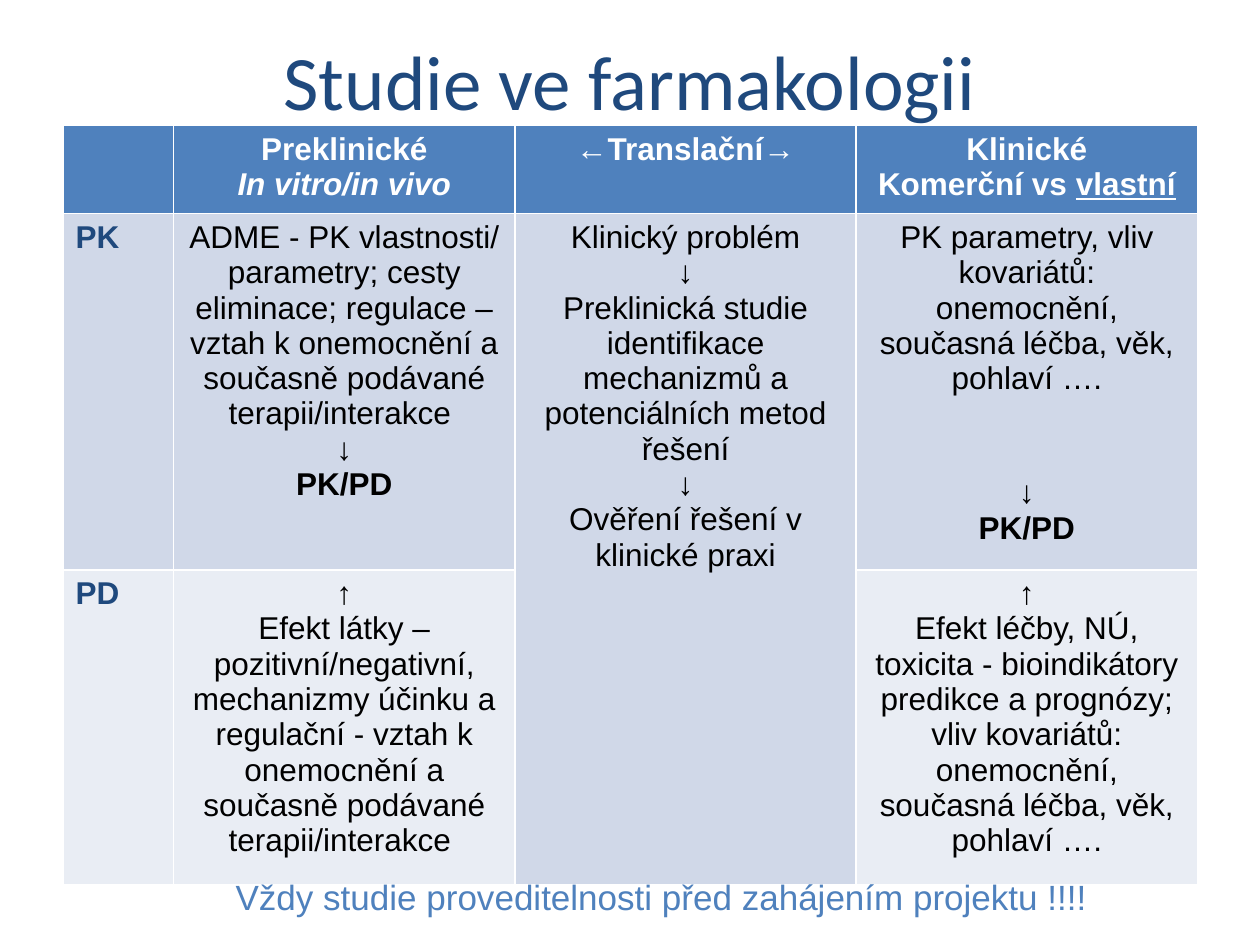
from dataclasses import dataclass, field
from typing import Any

from pptx import Presentation
from pptx.dml.color import RGBColor
from pptx.enum.text import MSO_ANCHOR, PP_ALIGN
from pptx.util import Cm, Pt

NAVY = RGBColor(0x1F, 0x49, 0x7D)
BLUE = RGBColor(0x4F, 0x81, 0xBD)
PALE = RGBColor(0xD0, 0xD8, 0xE8)
PALER = RGBColor(0xE9, 0xED, 0xF4)
WHITE = RGBColor(0xFF, 0xFF, 0xFF)
BLACK = RGBColor(0x00, 0x00, 0x00)

HEAD = {"name": "Arial", "size": Pt(18), "bold": True, "color": WHITE}
LABEL = HEAD | {"color": NAVY}
STRONG = HEAD | {"color": BLACK}
BODY = STRONG | {"bold": False}
TITLE = {"name": "Calibri", "size": Pt(44), "color": NAVY}
NOTE = {"name": "Arial", "size": Pt(20), "color": BLUE}


@dataclass
class Run:
    text: str
    fmt: dict[str, Any]


@dataclass
class Para:
    runs: list[Run]
    align: PP_ALIGN = PP_ALIGN.CENTER
    before: float = 0


@dataclass
class CellSpec:
    fill: RGBColor
    paras: list[Para] = field(default_factory=list)


def line(text: str, fmt: dict[str, Any], **kw: Any) -> Para:
    return Para([Run(text, fmt)], **kw)


def label(text: str) -> Para:
    return line(text, LABEL, align=PP_ALIGN.LEFT)


def write(tf: Any, paras: list[Para]) -> None:
    for i, para in enumerate(paras):
        p = tf.add_paragraph() if i else tf.paragraphs[0]
        p.alignment = para.align
        if para.before:
            p.space_before = Pt(para.before)
        for run in para.runs:
            r = p.add_run()
            r.text = run.text
            for key, value in run.fmt.items():
                if key == "color":
                    r.font.color.rgb = value
                else:
                    setattr(r.font, key, value)


def add_text(s: Any, box: tuple[float, ...], para: Para, wrap: bool) -> None:
    tf = s.shapes.add_textbox(*map(Cm, box)).text_frame
    tf.word_wrap = wrap
    tf.vertical_anchor = MSO_ANCHOR.MIDDLE if wrap else MSO_ANCHOR.TOP
    write(tf, [para])


def add_grid(s: Any, left: float, top: float, widths: list[float],
             heights: list[float], rows: list[list[CellSpec]]) -> Any:
    table = s.shapes.add_table(len(heights), len(widths), Cm(left), Cm(top),
                               Cm(sum(widths)), Cm(sum(heights))).table
    for col, width in zip(table.columns, widths):
        col.width = Cm(width)
    for row, height, specs in zip(table.rows, heights, rows):
        row.height = Cm(height)
        for cell, spec in zip(row.cells, specs):
            cell.fill.solid()
            cell.fill.fore_color.rgb = spec.fill
            write(cell.text_frame, spec.paras)
    return table


DOWN = line("↓", BODY)
UP = line("↑", STRONG)
PKPD = line("PK/PD", STRONG)

ROWS = [
    [
        CellSpec(BLUE),
        CellSpec(BLUE, [line("Preklinické", HEAD),
                        line("In vitro/in vivo", HEAD | {"italic": True})]),
        CellSpec(BLUE, [line("←Translační→", HEAD)]),
        CellSpec(BLUE, [line("Klinické", HEAD),
                        Para([Run("Komerční vs ", HEAD),
                              Run("vlastní", HEAD | {"underline": True})])]),
    ],
    [
        CellSpec(PALE, [label("PK")]),
        CellSpec(PALE, [
            line("ADME - PK vlastnosti/ parametry; cesty eliminace; regulace – "
                 "vztah k onemocnění a současně podávané terapii/interakce ", BODY),
            line("↓", STRONG), PKPD]),
        CellSpec(PALE, [
            line("Klinický problém", BODY), DOWN,
            line("Preklinická studie identifikace mechanizmů a "
                 "potenciálních metod řešení", BODY), DOWN,
            line("Ověření řešení v klinické praxi", BODY)]),
        CellSpec(PALE, [
            line("PK parametry, vliv kovariátů: onemocnění, současná léčba, "
                 "věk, pohlaví ….", BODY),
            line("↓", STRONG, before=45), PKPD]),
    ],
    [
        CellSpec(PALER, [label("PD")]),
        CellSpec(PALER, [
            UP,
            line("Efekt látky – pozitivní/negativní, mechanizmy účinku a "
                 "regulační - vztah k onemocnění a současně podávané "
                 "terapii/interakce ", BODY)]),
        CellSpec(PALE),
        CellSpec(PALER, [
            UP,
            line("Efekt léčby, NÚ, toxicita - bioindikátory predikce a prognózy; "
                 "vliv kovariátů: onemocnění, současná léčba, věk, pohlaví ….",
                 BODY)]),
    ],
]


def main() -> None:
    prs = Presentation()
    prs.slide_width, prs.slide_height = Cm(25.4), Cm(19.05)
    s = prs.slides.add_slide(prs.slide_layouts[6])
    add_text(s, (1.27, 0.53, 22.86, 2.16),
             line("Studie ve farmakologii", TITLE), True)
    table = add_grid(s, 1.27, 2.53, [2.23] + [6.88] * 3, [1.67, 6.8, 5.95], ROWS)
    table.cell(1, 2).merge(table.cell(2, 2))
    add_text(s, (4.5, 17.53, 17.8, 1.12),
             line("Vždy studie proveditelnosti před zahájením projektu !!!!",
                  NOTE, align=PP_ALIGN.LEFT), False)
    prs.save("out.pptx")


if __name__ == "__main__":
    main()
